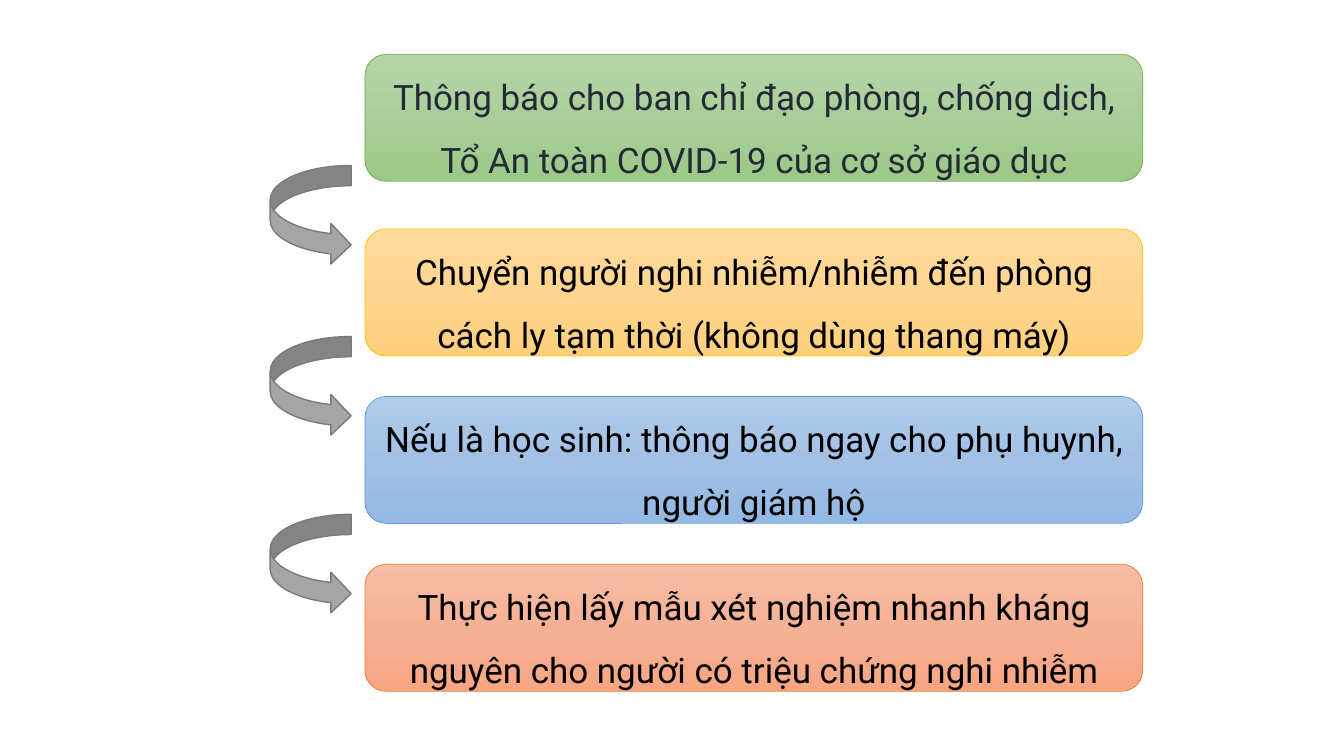
from copy import deepcopy
from dataclasses import dataclass

from pptx import Presentation
from pptx.dml.color import RGBColor
from pptx.enum.shapes import MSO_SHAPE
from pptx.enum.text import MSO_ANCHOR, PP_ALIGN
from pptx.oxml.ns import qn
from pptx.util import Cm, Pt

ROUNDED_BOX = MSO_SHAPE.ROUNDED_RECTANGLE
CURVED_ARROW = MSO_SHAPE.CURVED_RIGHT_ARROW
MIDDLE = MSO_ANCHOR.MIDDLE
CENTER = PP_ALIGN.CENTER
BLANK_LAYOUT = 6


@dataclass(frozen=True)
class Theme:
    font: str = "Roboto"
    text_size: float = 25
    line_spacing: float = 1.5
    dark: str = "222A35"
    black: str = "000000"
    green: tuple = ("B5D5A7", "AACE9A", "9CC987", "70AD47")
    yellow: tuple = ("FFDB9E", "FFD590", "FFD07C", "FFC000")
    blue: tuple = ("B1CBE9", "A3C1E5", "93B9E4", "5B9BD5")
    orange: tuple = ("F7BDA5", "F5B196", "F8A582", "ED7D31")
    arrow_fill: str = "A5A5A5"
    arrow_line: str = "7A7A7A"
    box_line_width: float = 0.5
    arrow_line_width: float = 1


THEME = Theme()

STEPS = [
    (1.37, THEME.green, THEME.dark,
     "Thông báo cho ban chỉ đạo phòng, chống dịch, Tổ An toàn COVID-19 của cơ sở giáo dục"),
    (5.77, THEME.yellow, THEME.black,
     "Chuyển người nghi nhiễm/nhiễm đến phòng cách ly tạm thời (không dùng thang máy)"),
    (9.99, THEME.blue, THEME.black,
     "Nếu là học sinh: thông báo ngay cho phụ huynh, người giám hộ"),
    (14.22, THEME.orange, THEME.black,
     "Thực hiện lấy mẫu xét nghiệm nhanh kháng nguyên cho người có triệu chứng nghi nhiễm"),
]
ARROW_TOPS = [4.17, 8.48, 12.96]


def add_outlined_shape(slide, kind, left, top, width, height, line_color, line_width):
    shape = slide.shapes.add_shape(kind, Cm(left), Cm(top), Cm(width), Cm(height))
    shape.shadow.inherit = False
    shape.line.color.rgb = RGBColor.from_string(line_color)
    shape.line.width = Pt(line_width)
    return shape


def fill_with_gradient(shape, colors):
    shape.fill.gradient()
    shape.fill.gradient_angle = 270
    first_stop = shape.element.spPr.find(f".//{qn('a:gs')}")
    first_stop.addnext(deepcopy(first_stop))
    for stop, position, color in zip(shape.fill.gradient_stops, (0, 0.5, 1), colors):
        stop.position = position
        stop.color.rgb = RGBColor.from_string(color)


def write_text(shape, text, color):
    frame = shape.text_frame
    frame.word_wrap = True
    frame.vertical_anchor = MIDDLE
    paragraph = frame.paragraphs[0]
    paragraph.alignment = CENTER
    paragraph.line_spacing = THEME.line_spacing
    run = paragraph.add_run()
    run.text = text
    run.font.name = THEME.font
    run.font.size = Pt(THEME.text_size)
    run.font.color.rgb = RGBColor.from_string(color)


def add_step(slide, top, colors, text_color, text):
    *gradient, outline = colors
    box = add_outlined_shape(slide, ROUNDED_BOX, 9.2, top, 19.6, 3.2,
                             outline, THEME.box_line_width)
    fill_with_gradient(box, gradient)
    write_text(box, text, text_color)


def add_step_arrow(slide, top):
    arrow = add_outlined_shape(slide, CURVED_ARROW, 6.81, top, 2.04, 2.51,
                               THEME.arrow_line, THEME.arrow_line_width)
    arrow.fill.solid()
    arrow.fill.fore_color.rgb = RGBColor.from_string(THEME.arrow_fill)


def main():
    presentation = Presentation()
    presentation.slide_width = Cm(33.87)
    presentation.slide_height = Cm(19.05)
    slide = presentation.slides.add_slide(presentation.slide_layouts[BLANK_LAYOUT])
    for step in STEPS:
        add_step(slide, *step)
    for top in ARROW_TOPS:
        add_step_arrow(slide, top)
    presentation.save("out.pptx")


if __name__ == "__main__":
    main()
